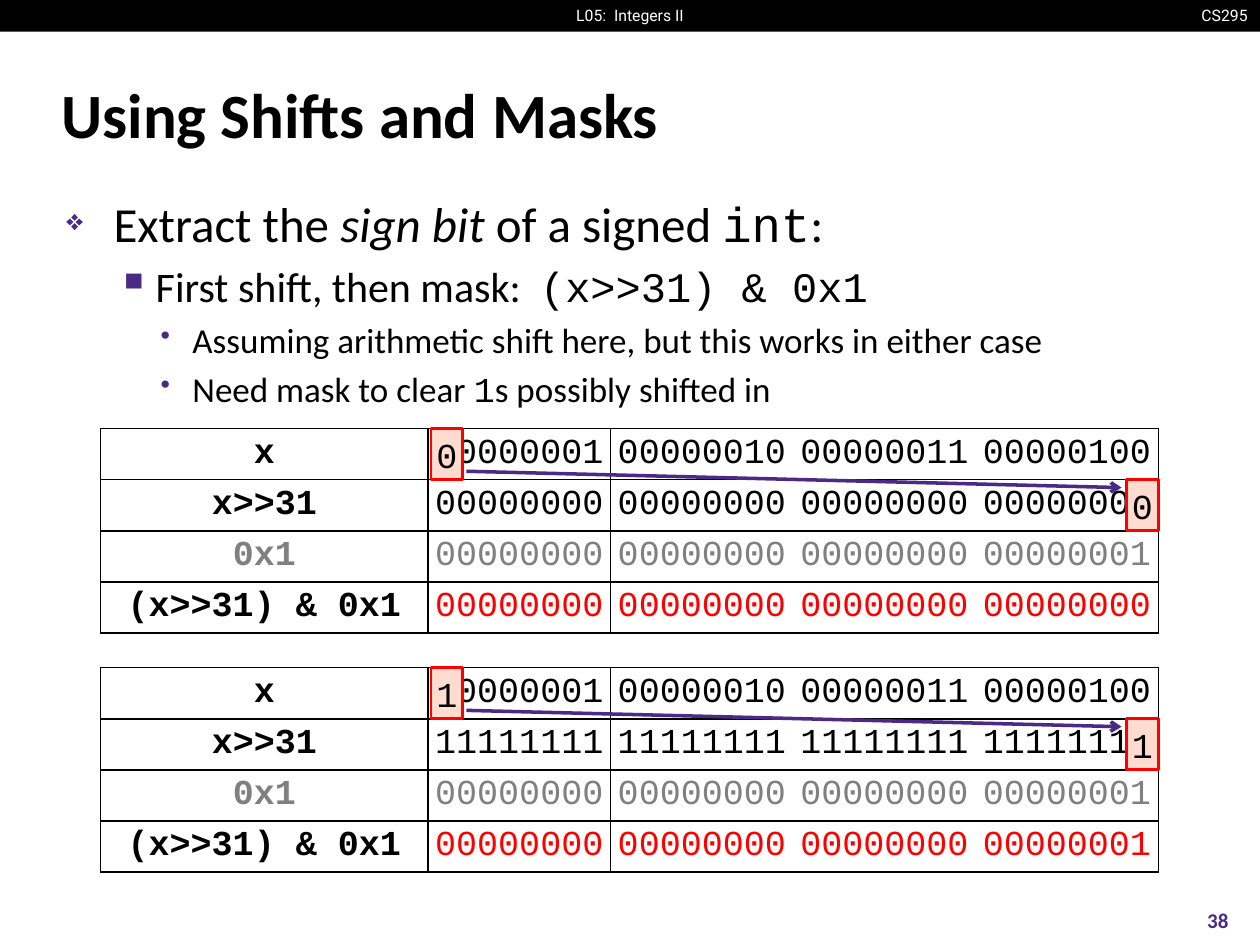
from dataclasses import dataclass

from lxml.etree import SubElement
from pptx import Presentation
from pptx.dml.color import RGBColor
from pptx.enum.shapes import MSO_CONNECTOR, MSO_SHAPE
from pptx.enum.text import MSO_ANCHOR as Anchor, PP_ALIGN as Align
from pptx.oxml.ns import qn
from pptx.util import Cm, Pt

COLORS = {
    "black": "000000", "white": "FFFFFF", "purple": "4B2A85",
    "gray": "808080", "red": "FF0000", "pink": "FFDBD0",
}
SANS, MONO, HEADER = "Calibri", "Courier New", "Roboto"
TABLE_LEFT, LABEL_W, BYTE_W, ROW_H = 2.03, 6.6, 3.68, 1.03
BIT_W = 0.64
SIGN_BIT_X, LAST_BIT_X = 8.69, 22.71


@dataclass
class Bullet:
    level: int
    char: str
    scale: int      # percent of the text size
    margin: float
    hanging: float
    size: int
    runs: list      # (text, format) pairs


@dataclass
class BitRow:
    label: str
    bits: str
    label_color: str = "black"
    bits_color: str = "black"


@dataclass
class Example:
    top: float
    sign: str
    rows: list


BULLETS = [
    Bullet(0, "❖", 60, 0.95, 0.95, 28, [
        ("Extract the ", {}), ("sign bit ", {"italic": True}),
        ("of a signed ", {}), ("int", {"font": MONO}), (":", {})]),
    Bullet(1, "▪", 110, 1.8, 0.79, 24, [
        ("First shift, then mask:  ", {}), ("(x>>31) & 0x1", {"font": MONO})]),
    Bullet(2, "•", 80, 2.54, 0.64, 20, [
        ("Assuming arithmetic shift here, but this works in either case", {})]),
    Bullet(2, "•", 80, 2.54, 0.64, 20, [
        ("Need mask to clear ", {}), ("1", {"font": MONO}),
        ("s possibly shifted in", {})]),
]


def make_example(top: float, sign: str) -> Example:
    """Work out the rows for a number whose top bit is sign."""
    zeros = "0" * 8
    lead = " ".join([zeros] * 3)
    return Example(top, sign, [
        BitRow("x", f"{sign}0000001 00000010 00000011 00000100"),
        BitRow("x>>31", " ".join([sign * 8] * 4)),
        BitRow("0x1", f"{lead} 00000001", "gray", "gray"),
        BitRow("(x>>31) & 0x1", f"{lead} 0000000{sign}", bits_color="red"),
    ])


def rgb(name: str) -> RGBColor:
    return RGBColor.from_string(COLORS[name])


def add_text(p, text: str, *, size=20, font=SANS, color="black",
             bold=False, italic=False, align=None) -> None:
    r = p.add_run()
    r.text = text
    r.font.size, r.font.name = Pt(size), font
    r.font.bold, r.font.italic = bold, italic
    r.font.color.rgb = rgb(color)
    if align is not None:
        p.alignment = align


def add_box(shapes, left, top, width, height, *, wrap=True, anchor=Anchor.TOP):
    tf = shapes.add_textbox(Cm(left), Cm(top), Cm(width), Cm(height)).text_frame
    tf.word_wrap, tf.vertical_anchor = wrap, anchor
    return tf


def add_rect(shapes, left, top, width, height, fill: str, line=None):
    sp = shapes.add_shape(MSO_SHAPE.RECTANGLE, Cm(left), Cm(top), Cm(width), Cm(height))
    sp.shadow.inherit = False
    sp.fill.solid()
    sp.fill.fore_color.rgb = rgb(fill)
    if line:
        sp.line.color.rgb = rgb(line)
        sp.line.width = Pt(1.5)
    else:
        sp.line.fill.background()
    return sp


def clear_margins(frame) -> None:
    frame.margin_left = frame.margin_right = 0
    frame.margin_top = frame.margin_bottom = 0


def indent(p, margin: float, hanging: float):
    pPr = p._p.get_or_add_pPr()
    pPr.set("marL", str(Cm(margin)))
    pPr.set("indent", str(-Cm(hanging)))
    return pPr


def add_bullet(p, b: Bullet) -> None:
    p.level = b.level
    pPr = indent(p, b.margin, b.hanging)
    SubElement(SubElement(pPr, qn("a:spcBef")), qn("a:spcPct"), val="20000")
    SubElement(SubElement(pPr, qn("a:buClr")), qn("a:srgbClr"), val=COLORS["purple"])
    SubElement(pPr, qn("a:buSzPct"), val=str(b.scale * 1000))
    SubElement(pPr, qn("a:buChar"), char=b.char)
    for text, fmt in b.runs:
        add_text(p, text, size=b.size, **fmt)


def set_borders(cell, sides: str) -> None:
    """Rule the sides named by letters of LRTB and hide the others."""
    tcPr = cell._tc.get_or_add_tcPr()
    for side in "LRTB":
        ln = SubElement(tcPr, qn(f"a:ln{side}"), w=str(Pt(1)))
        if side in sides:
            SubElement(SubElement(ln, qn("a:solidFill")), qn("a:srgbClr"),
                       val=COLORS["black"])
        else:
            SubElement(ln, qn("a:noFill"))


def add_bit_table(shapes, ex: Example) -> None:
    widths = [LABEL_W] + [BYTE_W] * 4
    borders = ["LRTB", "LRTB", "LTB", "TB", "RTB"]
    table = shapes.add_table(len(ex.rows), len(widths), Cm(TABLE_LEFT), Cm(ex.top),
                             Cm(sum(widths)), Cm(ROW_H * len(ex.rows))).table
    table.first_row = table.horz_banding = False
    for column, width in zip(table.columns, widths):
        column.width = Cm(width)
    for i, row in enumerate(ex.rows):
        table.rows[i].height = Cm(ROW_H)
        for j, text in enumerate([row.label, *row.bits.split()]):
            cell = table.cell(i, j)
            set_borders(cell, borders[j])
            cell.fill.background()
            clear_margins(cell)
            if j == 0:
                cell.margin_left = cell.margin_right = Cm(0.25)
            cell.vertical_anchor = Anchor.MIDDLE
            add_text(cell.text_frame.paragraphs[0], text, font=MONO, bold=j == 0,
                     color=row.bits_color if j else row.label_color, align=Align.CENTER)


def add_shift_mark(shapes, ex: Example) -> None:
    """Mark the sign bit and show where the shift moves it."""
    group = shapes.add_group_shape().shapes
    line = group.add_connector(MSO_CONNECTOR.STRAIGHT, Cm(9.4), Cm(ex.top + 0.86),
                               Cm(22.61), Cm(ex.top + 1.19))
    line.line.color.rgb = rgb("purple")
    line.line.width = Pt(2)
    SubElement(line.line._get_or_add_ln(), qn("a:tailEnd"), type="arrow")
    SubElement(line._element.spPr, qn("a:effectLst"))
    for left, top in [(SIGN_BIT_X, ex.top), (LAST_BIT_X, ex.top + ROW_H)]:
        tf = add_rect(group, left, top, BIT_W, ROW_H, "pink", "red").text_frame
        clear_margins(tf)
        tf.vertical_anchor = Anchor.MIDDLE
        add_text(tf.paragraphs[0], ex.sign, font=MONO, align=Align.CENTER)


def main() -> None:
    prs = Presentation()
    prs.slide_width, prs.slide_height = Cm(25.4), Cm(19.05)
    shapes = prs.slides.add_slide(prs.slide_layouts[6]).shapes

    add_rect(shapes, 0, 0, 25.4, 0.64, "black")
    for text, left, width, align in [("CS295", 23.9, 1.5, Align.RIGHT),
                                     ("L05:  Integers II", 11.33, 2.74, Align.CENTER)]:
        tf = add_box(shapes, left, 0, width, 0.64, wrap=False)
        add_text(tf.paragraphs[0], text, size=9, font=HEADER, color="white", align=align)

    p = add_box(shapes, 0.99, 1.22, 23.34, 2.11, anchor=Anchor.MIDDLE).paragraphs[0]
    indent(p, 0.33, 0.33)
    add_text(p, "Using Shifts and Masks", size=36, bold=True)

    tf = add_box(shapes, 1.09, 3.78, 23.24, 13.82)
    for i, bullet in enumerate(BULLETS):
        add_bullet(tf.add_paragraph() if i else tf.paragraphs[0], bullet)

    tf = add_box(shapes, 23.7, 18.03, 1.7, 1.02, anchor=Anchor.MIDDLE)
    add_text(tf.paragraphs[0], "38", size=12, color="purple", bold=True,
             align=Align.CENTER)

    examples = [make_example(8.64, "0"), make_example(13.46, "1")]
    for ex in examples:
        add_bit_table(shapes, ex)
        add_shift_mark(shapes, ex)
    prs.save("out.pptx")


if __name__ == "__main__":
    main()
